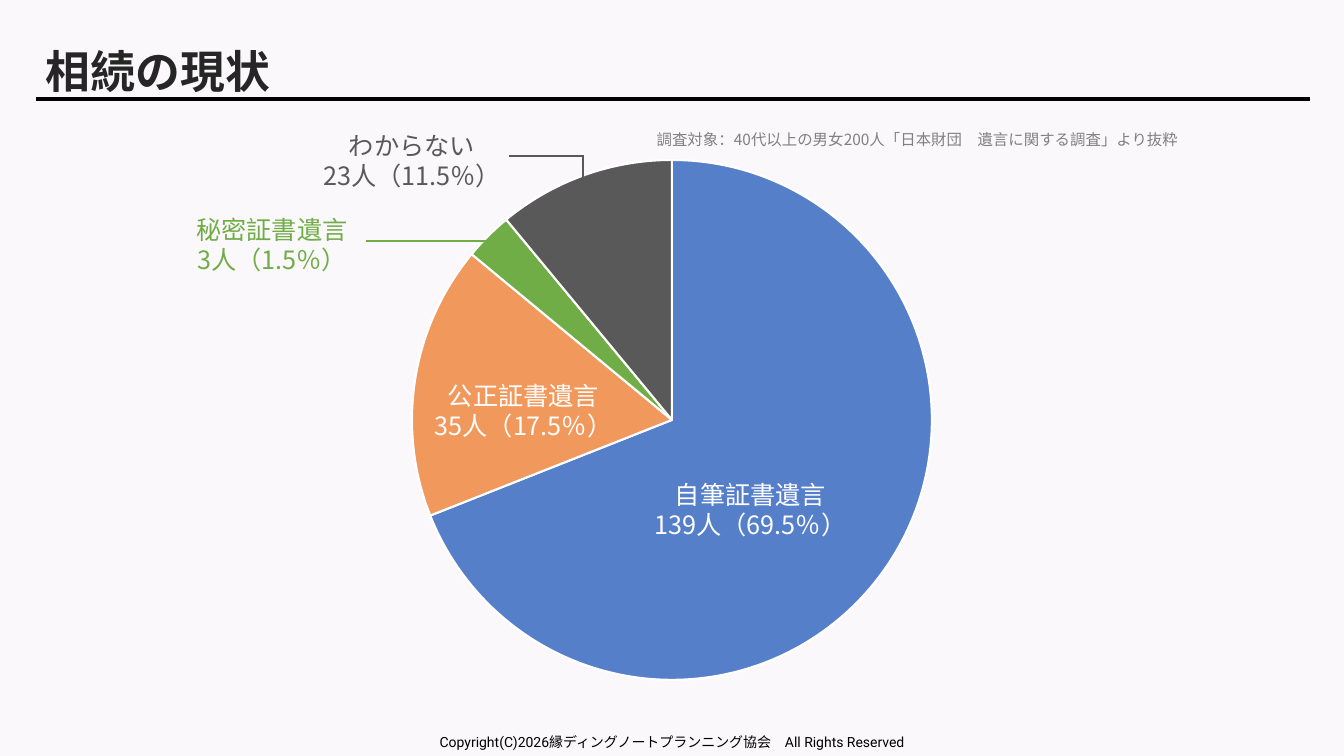
from lxml import etree
from pptx import Presentation
from pptx.chart.data import CategoryChartData
from pptx.dml.color import RGBColor
from pptx.enum.chart import XL_CHART_TYPE as ChartType
from pptx.enum.shapes import MSO_CONNECTOR as Connector
from pptx.enum.text import MSO_ANCHOR as Anchor, PP_ALIGN as Align
from pptx.oxml import parse_xml
from pptx.oxml.ns import nsdecls, qn
from pptx.util import Pt

PX = 9144000 / 1008  # EMU per px
CJK = "Noto Sans CJK JP"
COLORS = {
    "background": "FBF8FB",
    "title": "262626",
    "black": "000000",
    "white": "FFFFFF",
    "note": "808080",
    "blue": "567FCA",
    "orange": "F1995D",
    "green": "70AD47",
    "gray": "595959",
}


def color(name):
    return RGBColor.from_string(COLORS[name])


def add_text(box, lines, size, color_name, font_name=CJK, align=Align.CENTER, anchor=Anchor.MIDDLE):
    """Add a text box with one paragraph per line; box is left, top, width, height in px."""
    frame = slide.shapes.add_textbox(*(round(v * PX) for v in box)).text_frame
    frame.word_wrap = True
    frame.vertical_anchor = anchor
    frame.text = "\n".join(lines)
    for paragraph in frame.paragraphs:
        paragraph.alignment = align
        font = paragraph.font
        font.size, font.name = Pt(size), font_name
        font.color.rgb = color(color_name)
        east_asian = etree.SubElement(font._element.find(qn("a:defRPr")) if font._element.tag == qn("a:pPr")
                                      else font._element, qn("a:ea"))
        east_asian.set("typeface", CJK)
    return frame.paragraphs[0]


presentation = Presentation()
presentation.slide_width = round(1344 * PX)
presentation.slide_height = round(756 * PX)
slide = presentation.slides.add_slide(presentation.slide_layouts[6])
slide.background.fill.solid()
slide.background.fill.fore_color.rgb = color("background")

title = add_text((36, 38, 1073, 60), ["相続の現状"], 32, "title", align=Align.LEFT)
title.font.bold = True
title.line_spacing = 1.1

# Pie chart
chart_data = CategoryChartData()
chart_data.categories = ["1", "2", "3", "4"]
chart_data.add_series("Series 1", (69, 17, 3, 11))
chart_box = (298, 146, 748, 548)
chart = slide.shapes.add_chart(ChartType.PIE, *(round(v * PX) for v in chart_box), chart_data).chart
chart.has_legend = False
chart.has_title = False
chart.font.size, chart.font.name = Pt(16), CJK
chart.font.color.rgb = color("black")
plot = chart.plots[0]
plot.vary_by_categories = True
for index, name in enumerate(("blue", "orange", "green", "gray")):
    slice_format = plot.series[0].points[index].format
    slice_format.fill.solid()
    slice_format.fill.fore_color.rgb = color(name)
    slice_format.line.color.rgb = color("white")
    slice_format.line.width = Pt(1.5)

plot_area = chart._chartSpace.chart.plotArea
for old_layout in plot_area.findall(qn("c:layout")):
    plot_area.remove(old_layout)
plot_area.insert(0, parse_xml(
    f'<c:layout {nsdecls("c")}><c:manualLayout><c:layoutTarget val="inner"/>'
    '<c:xMode val="edge"/><c:yMode val="edge"/>'
    f'<c:x val="{114 / 748:.4f}"/><c:y val="{14 / 548:.4f}"/>'
    f'<c:w val="{520 / 748:.4f}"/><c:h val="{520 / 548:.4f}"/>'
    '</c:manualLayout></c:layout>'))

# Slice labels
for box, lines, name in (
    ((630, 477, 241, 65), ("自筆証書遺言", "139人（69.5％）"), "white"),
    ((403, 378, 241, 65), ("公正証書遺言", "35人（17.5％）"), "white"),
    ((298, 125, 228, 71), ("わからない", "23人（11.5％）"), "gray"),
    ((158, 209, 228, 71), ("秘密証書遺言", "3人（1.5％）"), "green"),
):
    add_text(box, lines, 18, name)

# Leader lines and title rule
for ends, name, width in (
    ((583, 156, 583, 211), "gray", 2),
    ((509, 156, 584, 156), "gray", 2),
    ((366, 241, 495, 241), "green", 2),
    ((36, 99, 1310, 99), "black", 3),
):
    line = slide.shapes.add_connector(Connector.STRAIGHT, *(round(v * PX) for v in ends))
    line.line.color.rgb = color(name)
    line.line.width = Pt(width)
    etree.SubElement(line._element.spPr, qn("a:effectLst"))

add_text((573, 125, 689, 29), ["調査対象：40代以上の男女200人「日本財団　遺言に関する調査」より抜粋"],
         11, "note", anchor=Anchor.TOP)
add_text((0, 729, 1344, 40), ["Copyright(C)2026縁ディングノートプランニング協会　All Rights Reserved"],
         10, "black", font_name="Roboto", anchor=Anchor.TOP)

presentation.save("out.pptx")
